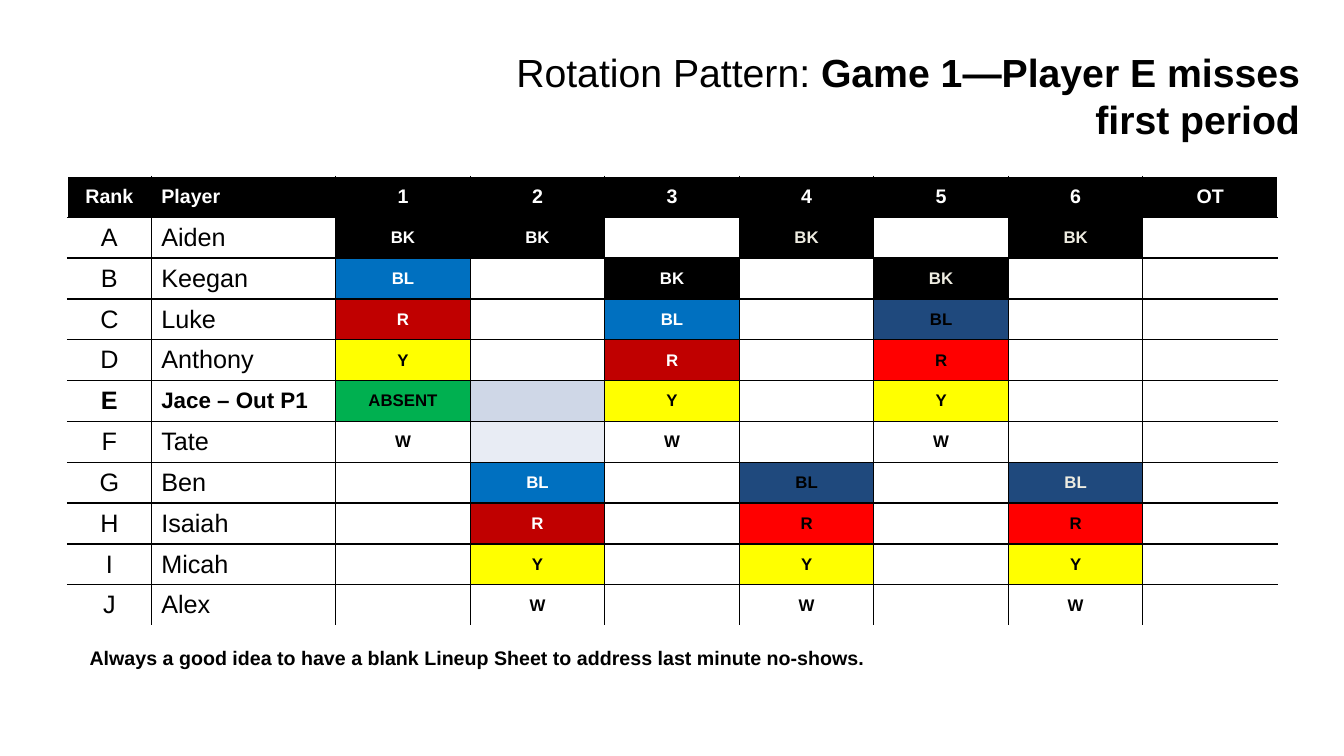
from dataclasses import dataclass

from lxml import etree
from pptx import Presentation
from pptx.dml.color import RGBColor
from pptx.enum.text import MSO_ANCHOR, PP_ALIGN
from pptx.oxml.ns import qn
from pptx.util import Inches, Pt

LEFT, CENTER, RIGHT = PP_ALIGN.LEFT, PP_ALIGN.CENTER, PP_ALIGN.RIGHT
MIDDLE = MSO_ANCHOR.MIDDLE


@dataclass(frozen=True)
class Theme:
    font: str = "Arial"
    black: str = "000000"
    white: str = "FFFFFF"
    cream: str = "EEECE1"
    blue: str = "0070C0"
    navy: str = "1F497D"
    crimson: str = "C00000"
    red: str = "FF0000"
    yellow: str = "FFFF00"
    green: str = "00B050"
    band_dark: str = "CFD7E7"
    band_light: str = "E8ECF4"
    title_size: int = 28
    player_size: int = 18
    absent_player_size: int = 16
    heading_size: int = 14
    shift_size: int = 12
    border_width: int = 1


THEME = Theme()

SHIFTS = {
    "-": ("", THEME.white, THEME.black),
    "dark": ("", THEME.band_dark, THEME.black),
    "light": ("", THEME.band_light, THEME.black),
    "black": ("BK", THEME.black, THEME.white),
    "black_cream": ("BK", THEME.black, THEME.cream),
    "blue": ("BL", THEME.blue, THEME.white),
    "navy": ("BL", THEME.navy, THEME.black),
    "navy_cream": ("BL", THEME.navy, THEME.cream),
    "crimson": ("R", THEME.crimson, THEME.white),
    "red": ("R", THEME.red, THEME.black),
    "yellow": ("Y", THEME.yellow, THEME.black),
    "white": ("W", THEME.white, THEME.black),
    "absent": ("ABSENT", THEME.green, THEME.black),
}

HEADINGS = ["Rank", "Player", "1", "2", "3", "4", "5", "6", "OT"]
ABSENT_RANK = "E"
ROTATION = [
    ("A", "Aiden", "black black - black_cream - black_cream -"),
    ("B", "Keegan", "blue - black - black_cream - -"),
    ("C", "Luke", "crimson - blue - navy - -"),
    ("D", "Anthony", "yellow - crimson - red - -"),
    ("E", "Jace – Out P1", "absent dark yellow - yellow - -"),
    ("F", "Tate", "white light white - white - -"),
    ("G", "Ben", "- blue - navy - navy_cream -"),
    ("H", "Isaiah", "- crimson - red - red -"),
    ("I", "Micah", "- yellow - yellow - yellow -"),
    ("J", "Alex", "- white - white - white -"),
]

TABLE_WIDTH, TABLE_HEIGHT = 12, 4.46
RANK_WIDTH, PLAYER_WIDTH = 0.83, 1.83


class SlideBuilder:
    def __init__(self, slide, theme):
        self.slide = slide
        self.theme = theme

    def style_font(self, font, size, color, bold):
        font.name = self.theme.font
        font.size = Pt(size)
        font.bold = bold
        font.color.rgb = RGBColor.from_string(color)

    def text(self, left, top, width, height, spans, size, align=LEFT):
        box = self.slide.shapes.add_textbox(
            Inches(left), Inches(top), Inches(width), Inches(height))
        box.text_frame.word_wrap = True
        para = box.text_frame.paragraphs[0]
        para.alignment = align
        for words, bold in spans:
            span = para.add_run()
            span.text = words
            self.style_font(span.font, size, self.theme.black, bold)

    def table(self, left, top, width, height, column_widths, row_count):
        frame = self.slide.shapes.add_table(
            row_count, len(column_widths),
            Inches(left), Inches(top), Inches(width), Inches(height))
        table = frame.table
        table.horz_banding = False
        for column, column_width in zip(table.columns, column_widths):
            column.width = Inches(column_width)
        for row in table.rows:
            row.height = Inches(height / row_count)
        return table

    def inner_borders(self, table, row, column):
        sides = {
            "a:lnL": column > 0,
            "a:lnR": column < len(table.columns) - 1,
            "a:lnT": row > 0,
            "a:lnB": row < len(table.rows) - 1,
        }
        properties = table.cell(row, column)._tc.get_or_add_tcPr()
        for tag in (side for side, is_inner in sides.items() if is_inner):
            line = etree.SubElement(
                properties, qn(tag), w=str(Pt(self.theme.border_width)))
            fill = etree.SubElement(line, qn("a:solidFill"))
            etree.SubElement(fill, qn("a:srgbClr"), val=self.theme.black)

    def cell(self, table, row, column, words, fill, color, size, bold):
        self.inner_borders(table, row, column)
        cell = table.cell(row, column)
        cell.fill.solid()
        cell.fill.fore_color.rgb = RGBColor.from_string(fill)
        cell.vertical_anchor = MIDDLE
        cell.text = words
        para = cell.text_frame.paragraphs[0]
        para.alignment = LEFT if column == 1 else CENTER
        self.style_font(para.font, size, color, bold)


def add_rotation(page):
    theme = page.theme
    period_count = len(HEADINGS) - 2
    period_width = (TABLE_WIDTH - RANK_WIDTH - PLAYER_WIDTH) / period_count
    widths = [RANK_WIDTH, PLAYER_WIDTH] + [period_width] * period_count
    table = page.table(
        0.67, 1.75, TABLE_WIDTH, TABLE_HEIGHT, widths, len(ROTATION) + 1)

    for column, heading in enumerate(HEADINGS):
        page.cell(table, 0, column, heading, theme.black, theme.white,
                  theme.heading_size, True)

    for row, (rank, player, shifts) in enumerate(ROTATION, start=1):
        absent = rank == ABSENT_RANK
        name_size = theme.absent_player_size if absent else theme.player_size
        for column, (words, size) in enumerate(
                [(rank, theme.player_size), (player, name_size)]):
            page.cell(table, row, column, words, theme.white, theme.black,
                      size, absent)
        for column, shift in enumerate(shifts.split(), start=2):
            page.cell(table, row, column, *SHIFTS[shift],
                      theme.shift_size, True)


def main():
    deck = Presentation()
    deck.slide_width = Inches(13.33)
    deck.slide_height = Inches(7.5)
    page = SlideBuilder(deck.slides.add_slide(deck.slide_layouts[6]), THEME)

    add_rotation(page)
    page.text(4.24, 0.43, 8.75, 1.04,
              [("Rotation Pattern:", False),
               (" Game 1—Player E misses first period", True)],
              THEME.title_size, RIGHT)
    page.text(0.79, 6.36, 8.99, 0.34,
              [("Always a good idea to have a blank Lineup Sheet "
                "to address last minute no-shows.", True)],
              THEME.heading_size)
    deck.save("out.pptx")


if __name__ == "__main__":
    main()
